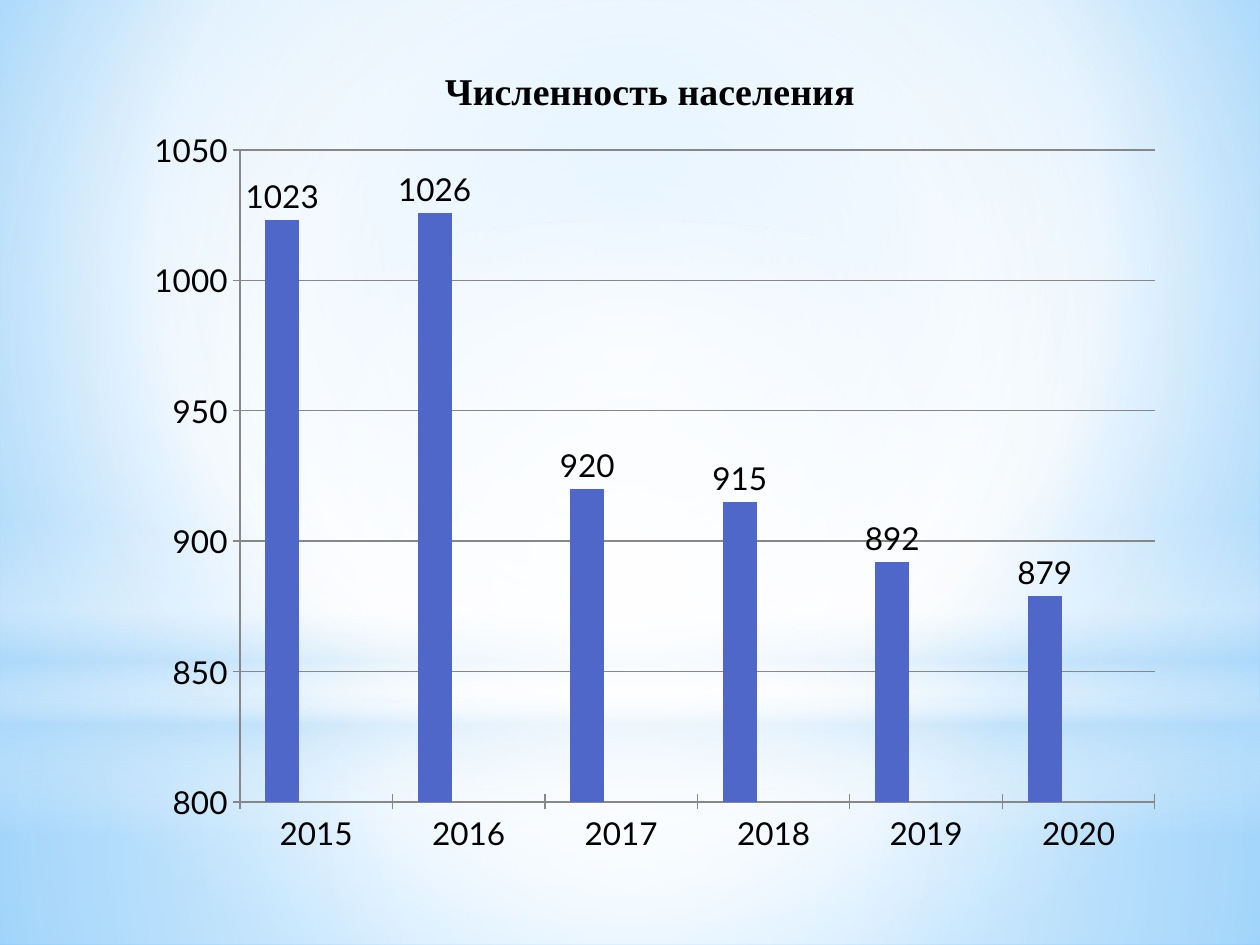
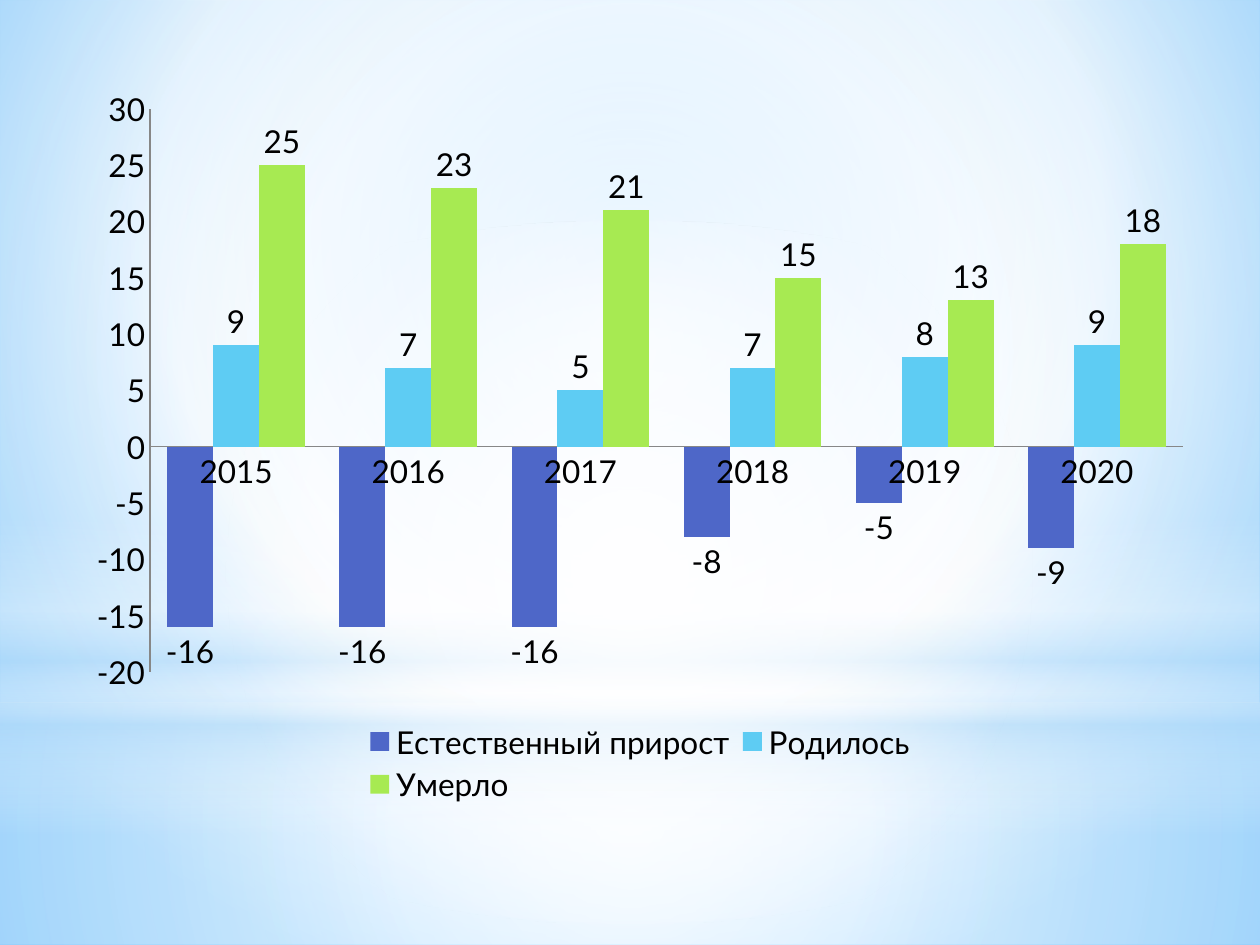
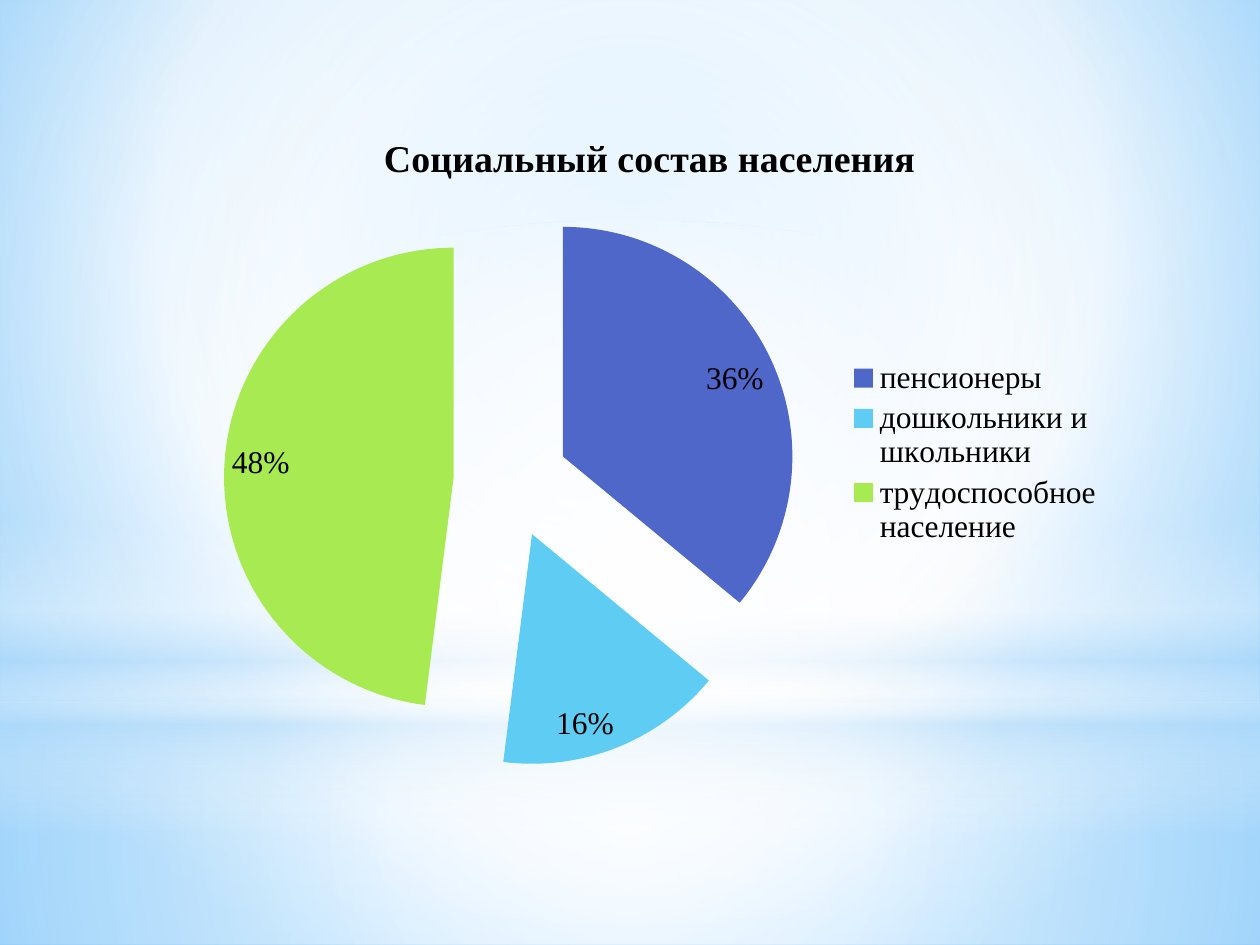
from lxml import etree
from pptx import Presentation
from pptx import util as u
from pptx.chart.data import CategoryChartData
from pptx.dml.color import RGBColor
from pptx.enum import chart as ch, shapes
from pptx.oxml.ns import qn

PX_PER_INCH = 126
W, H = 1260, 945
BLACK, GREY, WHITE, SKY = "000000", "878787", "FFFFFF", "B4DCFA"
SERIES_COLORS = ["4E67C8", "5ECCF3", "A7EA52"]
SANS, SERIF = "Lato", "Times New Roman"
YEARS = ["2015", "2016", "2017", "2018", "2019", "2020"]
CENTER = (50, 50, 50, 50)


def px(n):
    return u.Emu(round(n * u.Inches(1) / PX_PER_INCH))


def color(hex_code):
    return RGBColor.from_string(hex_code)


def sub(parent, tag, **attrs):
    return etree.SubElement(parent, qn(tag), {k: str(v) for k, v in attrs.items()})


# Shared backdrop
def fill_gradient(fill, owner, stops, focus=None):
    """Stops are (position %, colour, opacity %); without a focus it runs downwards."""
    fill.gradient()
    grad = next(owner.iter(qn("a:gradFill")))
    for child in list(grad):
        grad.remove(child)
    stop_list = sub(grad, "a:gsLst")
    for pos, hex_code, opacity in stops:
        stop = sub(stop_list, "a:gs", pos=pos * 1000)
        sub(sub(stop, "a:srgbClr", val=hex_code), "a:alpha", val=opacity * 1000)
    if focus:
        path = sub(grad, "a:path", path="circle")
        sub(path, "a:fillToRect", **{k: v * 1000 for k, v in zip("ltrb", focus)})
    else:
        sub(grad, "a:lin", ang=90 * 60000, scaled=0)


def add_glow(s, kind, top, height, stops, focus=None):
    sp = s.shapes.add_shape(kind, 0, px(top), px(W), px(height))
    sp.shadow.inherit = False
    sp.line.fill.background()
    fill_gradient(sp.fill, sp.element, stops, focus)
    return sp


def build_master(prs, s):
    """Draw the backdrop on a slide, then move it behind everything on the master."""
    master = prs.slide_master
    fill_gradient(master.background.fill, master.element,
                  [(0, "9ED5FF", 100), (60, WHITE, 100), (100, "5BB9FF", 100)],
                  (20, 10, 20, 60))
    rect, oval = shapes.MSO_SHAPE.RECTANGLE, shapes.MSO_SHAPE.OVAL
    glows = [
        add_glow(s, rect, 703, 242, [(0, WHITE, 91), (37, WHITE, 76), (100, SKY, 79)], CENTER),
        add_glow(s, rect, 0, 703, [(0, WHITE, 89), (48, WHITE, 62), (100, SKY, 79)], CENTER),
        add_glow(s, rect, 519, 315, [(0, WHITE, 0), (29, WHITE, 30), (45, SKY, 40),
                                     (55, WHITE, 26), (65, SKY, 60), (100, WHITE, 0)]),
        add_glow(s, oval, 221, 703, [(0, WHITE, 100), (56, WHITE, 0)], CENTER),
    ]
    for i, sp in enumerate(glows):
        master.shapes.element.insert(2 + i, sp.element)


# Charts
def place(part, index, frame, box, inner=False):
    """Fix a chart part at a slide box, given as left, top, width, height in px."""
    for old in part.findall(qn("c:layout")):
        part.remove(old)
    layout = etree.Element(qn("c:layout"))
    part.insert(index, layout)
    manual = sub(layout, "c:manualLayout")
    if inner:
        sub(manual, "c:layoutTarget", val="inner")
    for axis in "xy":
        sub(manual, f"c:{axis}Mode", val="edge")
    left, top, width, height = frame
    x, y, w, h = box
    shares = {"x": (x - left) / width, "y": (y - top) / height,
              "w": w / width, "h": h / height}
    for name, share in shares.items():
        sub(manual, f"c:{name}", val=round(share, 4))


def add_chart(s, kind, frame, plot_box, cats, series, font, title=None):
    data = CategoryChartData()
    data.categories = cats
    for name, values in series:
        data.add_series(name, values)
    chart = s.shapes.add_chart(kind, *map(px, frame), data).chart
    chart.font.name, chart.font.size = font, u.Pt(18)
    chart.font.color.rgb = color(BLACK)
    chart.has_legend = False
    chart.has_title = title is not None
    if title:
        p = chart.chart_title.text_frame.paragraphs[0]
        p.text = title
        p.font.name, p.font.size, p.font.bold = SERIF, u.Pt(21.6), True
        p.font.color.rgb = color(BLACK)
    place(next(chart.element.iter(qn("c:plotArea"))), 0, frame, plot_box, inner=True)
    return chart


def add_legend(chart, position, frame, box):
    chart.has_legend = True
    chart.legend.position = position
    chart.legend.include_in_layout = False
    place(next(chart.element.iter(qn("c:legend"))), 1, frame, box)


def show_labels(plot, position, percent=False):
    plot.has_data_labels = True
    labels = plot.data_labels
    labels.show_value, labels.show_percentage = not percent, percent
    labels.position = position
    if percent:
        labels.number_format, labels.number_format_is_linked = "0%", False


def add_columns(s, frame, plot_box, series, limits, gap, tick, grid, title=None):
    chart = add_chart(s, ch.XL_CHART_TYPE.COLUMN_CLUSTERED, frame, plot_box,
                      YEARS, series, SANS, title)
    plot = chart.plots[0]
    plot.gap_width, plot.overlap, plot.vary_by_categories = gap, 0, False
    show_labels(plot, ch.XL_LABEL_POSITION.OUTSIDE_END)
    for ser, hex_code in zip(plot.series, SERIES_COLORS):
        ser.format.fill.solid()
        ser.format.fill.fore_color.rgb = color(hex_code)
        ser.invert_if_negative = False
    value_axis = chart.value_axis
    value_axis.minimum_scale, value_axis.maximum_scale, value_axis.major_unit = limits
    value_axis.has_major_gridlines = grid
    lines = [chart.category_axis.format.line, value_axis.format.line]
    if grid:
        lines.append(value_axis.major_gridlines.format.line)
    for line in lines:
        line.color.rgb, line.width = color(GREY), u.Pt(0.75)
    for axis in (chart.category_axis, value_axis):
        axis.major_tick_mark = tick
        axis.minor_tick_mark = ch.XL_TICK_MARK.NONE
    return chart


def add_pie(s, frame, plot_box, cats, values, explosion, title):
    chart = add_chart(s, ch.XL_CHART_TYPE.PIE, frame, plot_box, cats,
                      [("Series 1", values)], SERIF, title)
    plot = chart.plots[0]
    show_labels(plot, ch.XL_LABEL_POSITION.INSIDE_END, percent=True)
    ser = next(chart.element.iter(qn("c:ser")))
    ser.find(qn("c:tx")).addnext(
        etree.Element(qn("c:explosion"), {"val": str(explosion)}))
    for i, hex_code in enumerate(SERIES_COLORS):
        fill = plot.series[0].points[i].format.fill
        fill.solid()
        fill.fore_color.rgb = color(hex_code)
    return chart


# Slides
def population_slide(s):
    empty = [None] * len(YEARS)
    add_columns(s, (134, 37, 1042, 833), (240, 150, 915, 652),
                [("Series 1", [1023, 1026, 920, 915, 892, 879]),
                 ("Series 2", empty), ("Series 3", empty)],
                (800, 1050, 50), 150, ch.XL_TICK_MARK.CROSS, True,
                "Численность населения ")


def natural_growth_slide(s):
    frame = (74, 76, 1131, 735)
    chart = add_columns(s, frame, (150, 109, 1033, 563),
                        [("Естественный прирост", [-16, -16, -16, -8, -5, -9]),
                         ("Родилось", [9, 7, 5, 7, 8, 9]),
                         ("Умерло", [25, 23, 21, 15, 13, 18])],
                        (-20, 30, 5), 75, ch.XL_TICK_MARK.NONE, False)
    add_legend(chart, ch.XL_LEGEND_POSITION.BOTTOM, frame, (357, 718, 566, 90))


def social_slide(s):
    frame = (184, 106, 932, 694)
    chart = add_pie(s, frame, (224, 194, 574, 574),
                    ["пенсионеры", "дошкольники и школьники", "трудоспособное население "],
                    [36, 16, 48], 25, "Социальный состав населения")
    add_legend(chart, ch.XL_LEGEND_POSITION.RIGHT, frame, (844, 355, 262, 195))


def main():
    prs = Presentation()
    prs.slide_width, prs.slide_height = px(W), px(H)
    blank = prs.slide_layouts[6]
    builders = [population_slide, natural_growth_slide, social_slide]
    slides = [prs.slides.add_slide(blank) for _ in builders]
    build_master(prs, slides[0])
    for build, s in zip(builders, slides):
        build(s)
    prs.save("out.pptx")


if __name__ == "__main__":
    main()
